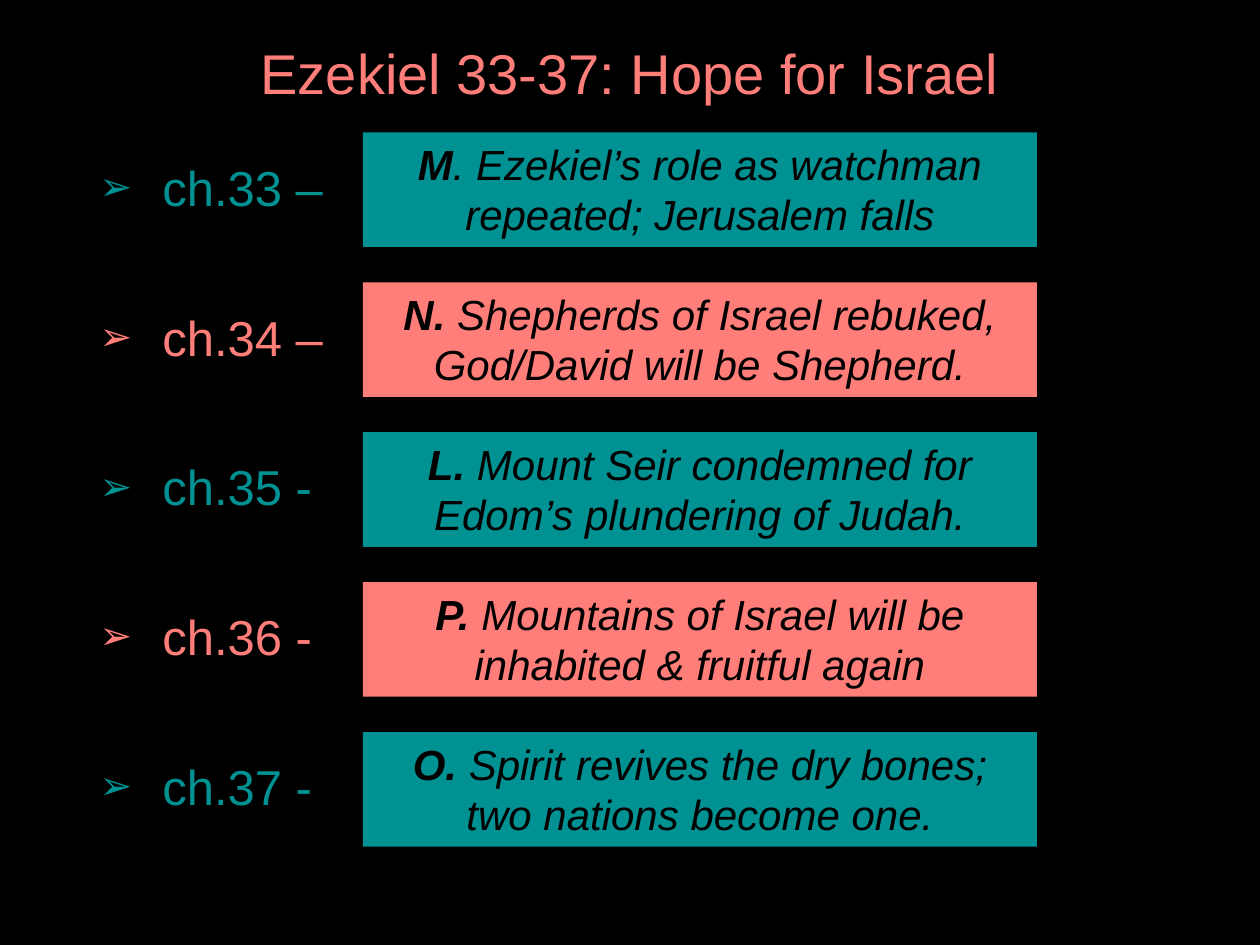
from dataclasses import dataclass

from lxml import etree
from pptx import Presentation
from pptx import util as u
from pptx.dml.color import RGBColor
from pptx.enum import shapes, text
from pptx.oxml.ns import qn


@dataclass(frozen=True)
class Theme:
    black: str = "000000"
    teal: str = "009193"
    coral: str = "FF7E79"
    font: str = "Arial"
    title_size: int = 32
    chapter_size: int = 28
    summary_size: int = 24


COLUMNS, ROWS = 100, 75
FIRST_BOX, BOX_PITCH = 10.5, 11.9

CHAPTERS = [
    ("ch.33 –", "M", ". Ezekiel’s role as watchman repeated; Jerusalem falls"),
    ("ch.34 –", "N. ", "Shepherds of Israel rebuked, God/David will be Shepherd."),
    ("ch.35 -", "L. ", "Mount Seir condemned for Edom’s plundering of Judah."),
    ("ch.36 -", "P. ", "Mountains of Israel will be inhabited & fruitful again"),
    ("ch.37 -", "O. ", "Spirit revives the dry bones; two nations become one."),
]


class SlideBuilder:
    def __init__(self, deck, theme):
        self.theme = theme
        self.column = deck.slide_width / COLUMNS
        self.row = deck.slide_height / ROWS
        self.slide = deck.slides.add_slide(deck.slide_layouts[5])
        self.slide.background.fill.solid()
        self.slide.background.fill.fore_color.rgb = RGBColor.from_string(theme.black)

    def area(self, left, top, width, height):
        """Turn grid columns and rows into slide lengths."""
        return (round(left * self.column), round(top * self.row),
                round(width * self.column), round(height * self.row))

    def add_run(self, paragraph, wording, size, color, bold=False, italic=False):
        run = paragraph.add_run()
        run.text = wording
        font = run.font
        font.name, font.size = self.theme.font, u.Pt(size)
        font.bold, font.italic = bold, italic
        font.color.rgb = RGBColor.from_string(color)

    def title(self, wording, *cells):
        heading = self.slide.shapes.title
        heading.left, heading.top, heading.width, heading.height = self.area(*cells)
        heading.text_frame.vertical_anchor = text.MSO_ANCHOR.MIDDLE
        paragraph = heading.text_frame.paragraphs[0]
        paragraph.alignment = text.PP_ALIGN.CENTER
        paragraph.line_spacing = 0.9
        self.add_run(paragraph, wording, self.theme.title_size, self.theme.coral)

    def chapter_list(self, labels, colors, *cells):
        frame = self.slide.shapes.add_textbox(*self.area(*cells)).text_frame
        frame.word_wrap = True
        for index, (label, color) in enumerate(zip(labels, colors)):
            paragraph = frame.add_paragraph() if index else frame.paragraphs[0]
            self.add_arrow_bullet(paragraph)
            if index:
                paragraph.space_before = u.Pt(4)
            paragraph.space_after = u.Pt(48)
            self.add_run(paragraph, label, self.theme.chapter_size, color)

    def add_arrow_bullet(self, paragraph):
        properties = paragraph._p.get_or_add_pPr()
        indent = u.Inches(0.5)
        properties.set("marL", str(indent))
        properties.set("indent", str(-indent))
        etree.SubElement(properties, qn("a:buSzPct"), val="80000")
        etree.SubElement(properties, qn("a:buFont"), typeface=self.theme.font)
        etree.SubElement(properties, qn("a:buChar"), char="➢")

    def summary_box(self, letter, summary, color, *cells):
        box = self.slide.shapes.add_shape(
            shapes.MSO_SHAPE.RECTANGLE, *self.area(*cells))
        box.shadow.inherit = False
        box.fill.solid()
        box.fill.fore_color.rgb = RGBColor.from_string(color)
        box.line.fill.background()
        frame = box.text_frame
        frame.word_wrap = True
        frame.auto_size = text.MSO_AUTO_SIZE.SHAPE_TO_FIT_TEXT
        frame.vertical_anchor = text.MSO_ANCHOR.TOP
        paragraph = frame.paragraphs[0]
        paragraph.alignment = text.PP_ALIGN.CENTER
        for wording, bold in ((letter, True), (summary, False)):
            self.add_run(paragraph, wording, self.theme.summary_size,
                         self.theme.black, bold, italic=True)


def main():
    deck = Presentation()
    deck.slide_width, deck.slide_height = u.Inches(10), u.Inches(7.5)
    theme = Theme()
    builder = SlideBuilder(deck, theme)
    colors = [(theme.teal, theme.coral)[i % 2] for i in range(len(CHAPTERS))]

    builder.title("Ezekiel 33-37: Hope for Israel", 6.9, 1.6, 86.2, 9)
    builder.chapter_list([label for label, *_ in CHAPTERS], colors,
                         6.9, 12, 86.2, 61.6)
    for index, (_, letter, summary) in enumerate(CHAPTERS):
        builder.summary_box(letter, summary, colors[index],
                            28.8, FIRST_BOX + index * BOX_PITCH, 53.5, 9.1)
    deck.save("out.pptx")


if __name__ == "__main__":
    main()
